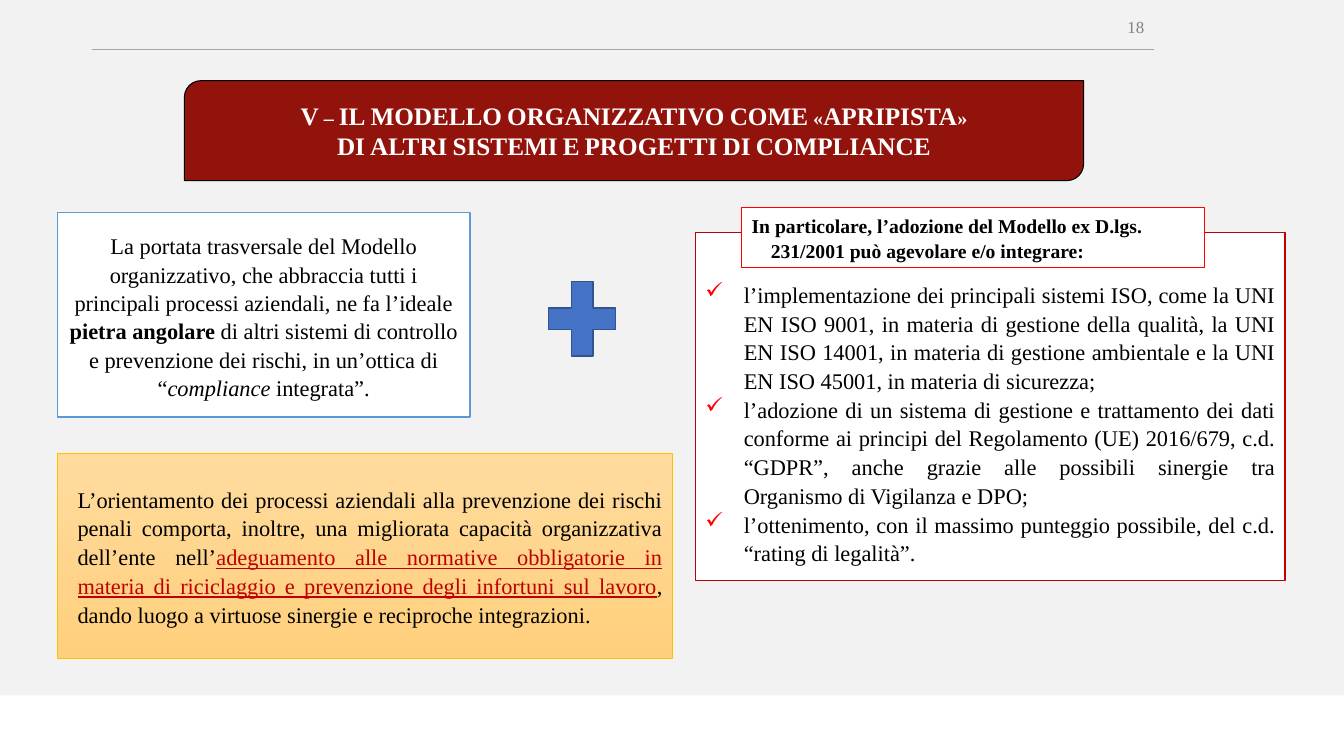
from dataclasses import dataclass

import lxml.etree
import pptx
import pptx.dml.color
import pptx.enum.shapes
import pptx.enum.text
import pptx.oxml.ns
import pptx.util

SHAPE = pptx.enum.shapes.MSO_SHAPE
ALIGN = pptx.enum.text.PP_ALIGN
ANCHOR = pptx.enum.text.MSO_ANCHOR
COLUMNS, ROWS = 32, 18
WIDTH, HEIGHT = pptx.util.Inches(13.33), pptx.util.Inches(7.5)


@dataclass(frozen=True)
class Theme:
    font: str = "Times New Roman"
    background: str = "F2F2F2"
    white: str = "FFFFFF"
    black: str = "000000"
    rule: str = "A5A5A5"
    number: str = "808080"
    title: str = "92130B"
    accent: str = "C00000"
    bright: str = "FF0000"
    blue: str = "5B9BD5"
    plus: str = "4472C4"
    plus_edge: str = "325491"
    gold: tuple = ("FFDB9E", "FFD07C")
    gold_edge: str = "FFC000"
    number_size: int = 12
    lead_size: int = 14
    body_size: int = 16
    title_size: int = 18


THEME = Theme()


@dataclass(frozen=True)
class Area:
    column: float
    row: float
    columns: float
    rows: float

    def inner(self, column, row, columns, rows):
        return Area(self.column + column, self.row + row, columns, rows)

    def emu(self):
        across, down = WIDTH / COLUMNS, HEIGHT / ROWS
        return (round(self.column * across), round(self.row * down),
                round(self.columns * across), round(self.rows * down))


def color(value):
    return pptx.dml.color.RGBColor.from_string(value)


def add_box(shapes, area, fill, edge=None, weight=1, kind=SHAPE.RECTANGLE):
    box = shapes.add_shape(kind, *area.emu())
    box.shadow.inherit = False
    if isinstance(fill, tuple):
        box.fill.gradient()
        box.fill.gradient_angle = 270
        for stop, value in zip(box.fill.gradient_stops, fill):
            stop.color.rgb = color(value)
    else:
        box.fill.solid()
        box.fill.fore_color.rgb = color(fill)
    if edge:
        box.line.color.rgb = color(edge)
        box.line.width = pptx.util.Pt(weight)
    else:
        box.line.fill.background()
    return box


def set_frame(box, anchor=ANCHOR.TOP, top=0.05, bottom=0.05):
    frame = box.text_frame
    frame.word_wrap = True
    frame.auto_size = pptx.enum.text.MSO_AUTO_SIZE.NONE
    frame.vertical_anchor = anchor
    frame.margin_left = frame.margin_right = pptx.util.Inches(0.1)
    frame.margin_top = pptx.util.Inches(top)
    frame.margin_bottom = pptx.util.Inches(bottom)
    return frame


def set_para(para, align=ALIGN.LEFT, spacing=1.0, after=0, left=0, hanging=0, bullet=None):
    properties = para._p.get_or_add_pPr()
    properties.set("marL", str(pptx.util.Inches(left)))
    properties.set("indent", str(-pptx.util.Inches(hanging)))
    if bullet:
        name = pptx.oxml.ns.qn
        tint = lxml.etree.SubElement(properties, name("a:buClr"))
        lxml.etree.SubElement(tint, name("a:srgbClr"), val=THEME.bright)
        lxml.etree.SubElement(properties, name("a:buChar"), char=bullet)
    para.alignment = align
    para.line_spacing = spacing
    para.space_before = pptx.util.Pt(0)
    para.space_after = pptx.util.Pt(after)


def add_span(para, text, size=THEME.body_size, ink=THEME.black, bold=False,
             italic=False, underline=False, small_caps=False):
    span = para.add_run()
    span.text = text
    font = span.font
    font.name, font.size = THEME.font, pptx.util.Pt(size)
    font.bold, font.italic, font.underline = bold, italic, underline
    font.color.rgb = color(ink)
    if small_caps:
        span._r.get_or_add_rPr().set("cap", "small")


def add_backdrop(page, area):
    page.background.fill.solid()
    page.background.fill.fore_color.rgb = color(THEME.background)
    add_box(page.shapes, area.inner(0, 16.56, area.columns, 1.44), THEME.white)
    left, top, width, _ = area.inner(2.2, 1.18, 25.28, 0).emu()
    rule = page.shapes.add_connector(
        pptx.enum.shapes.MSO_CONNECTOR.STRAIGHT, left, top, left + width, top)
    rule.line.color.rgb = color(THEME.rule)
    rule.line.width = pptx.util.Pt(0.5)
    lxml.etree.SubElement(rule.element.spPr, pptx.oxml.ns.qn("a:effectLst"))
    number = page.shapes.add_textbox(*area.inner(20.28, 0.17, 7.2, 0.96).emu())
    para = set_frame(number, ANCHOR.MIDDLE).paragraphs[0]
    set_para(para, ALIGN.RIGHT)
    add_span(para, "18", size=THEME.number_size, ink=THEME.number)


def add_title(page, area):
    band = add_box(page.shapes, area, THEME.title, THEME.black, 0.75,
                   SHAPE.ROUND_2_DIAG_RECTANGLE)
    title = page.shapes.title
    title.left, title.top, title.width, title.height = area.emu()
    title.element.addprevious(band.element)
    frame = set_frame(title, ANCHOR.MIDDLE)
    lines = ("V – IL MODELLO ORGANIZZATIVO COME «APRIPISTA»",
             "DI ALTRI SISTEMI E PROGETTI DI COMPLIANCE")
    for index, text in enumerate(lines):
        para = frame.add_paragraph() if index else frame.paragraphs[0]
        set_para(para, ALIGN.CENTER)
        add_span(para, text, size=THEME.title_size, ink=THEME.white, bold=True, small_caps=True)


def add_scope(page, area):
    box = add_box(page.shapes, area, THEME.white, THEME.blue)
    para = set_frame(box, top=0.18, bottom=0.1).paragraphs[0]
    set_para(para, ALIGN.CENTER, 1.06)
    add_span(para, "La portata trasversale del Modello organizzativo, che abbraccia tutti i "
             "principali processi aziendali, ne fa l’ideale ")
    add_span(para, "pietra angolare ", bold=True)
    add_span(para, "di altri sistemi di controllo e prevenzione dei rischi, in un’ottica di “")
    add_span(para, "compliance", italic=True)
    add_span(para, " integrata”.")


def add_synergies(page, area):
    box = add_box(page.shapes, area, THEME.gold, THEME.gold_edge, 0.5)
    para = set_frame(box, ANCHOR.MIDDLE).paragraphs[0]
    set_para(para, ALIGN.JUSTIFY, 1.07, after=8, left=0.1)
    add_span(para, "L’orientamento dei processi aziendali alla prevenzione dei rischi penali "
             "comporta, inoltre, una migliorata capacità organizzativa dell’ente nell’")
    add_span(para, "adeguamento alle normative obbligatorie in materia di riciclaggio e "
             "prevenzione degli infortuni sul lavoro", ink=THEME.accent, underline=True)
    add_span(para, ", dando luogo a virtuose sinergie e reciproche integrazioni.")


def add_benefits(page, area):
    group = page.shapes.add_group_shape()
    panel = add_box(group.shapes, area.inner(0, 0.6, area.columns, area.rows - 0.6),
                    THEME.white, THEME.accent)
    frame = set_frame(panel, top=0.46, bottom=0.1)
    benefits = (
        "l’implementazione dei principali sistemi ISO, come la UNI EN ISO 9001, in materia di "
        "gestione della qualità, la UNI EN ISO 14001, in materia di gestione ambientale e la "
        "UNI EN ISO 45001, in materia di sicurezza;",
        "l’adozione di un sistema di gestione e trattamento dei dati conforme ai principi del "
        "Regolamento (UE) 2016/679, c.d. “GDPR”, anche grazie alle possibili sinergie tra "
        "Organismo di Vigilanza e DPO;",
        "l’ottenimento, con il massimo punteggio possibile, del c.d. “rating di legalità”.",
    )
    for index, text in enumerate(benefits):
        para = frame.add_paragraph() if index else frame.paragraphs[0]
        set_para(para, ALIGN.JUSTIFY, 1.07, left=0.38, hanging=0.38, bullet="✓")
        add_span(para, text)
    lead = add_box(group.shapes, area.inner(1.1, 0, 11.02, 1.44), THEME.white, THEME.bright, 0.75)
    para = set_frame(lead).paragraphs[0]
    set_para(para, spacing=1.06, left=0.19, hanging=0.19)
    add_span(para, "In particolare, l’adozione del Modello ex D.lgs. 231/2001 può agevolare "
             "e/o integrare:", size=THEME.lead_size, bold=True)


def main():
    deck = pptx.Presentation()
    deck.slide_width, deck.slide_height = WIDTH, HEIGHT
    page = deck.slides.add_slide(deck.slide_layouts.get_by_name("Title Only"))
    add_backdrop(page, Area(0, 0, COLUMNS, ROWS))
    add_title(page, Area(4.39, 1.92, 21.41, 2.38))
    add_synergies(page, Area(1.37, 10.8, 14.64, 4.87))
    add_benefits(page, Area(16.56, 4.94, 14.04, 8.88))
    add_scope(page, Area(1.37, 5.06, 9.82, 4.87))
    add_box(page.shapes, Area(12.77, 6.38, 2.18, 2.42), THEME.plus, THEME.plus_edge,
            kind=SHAPE.MATH_PLUS)
    deck.save("out.pptx")


if __name__ == "__main__":
    main()
